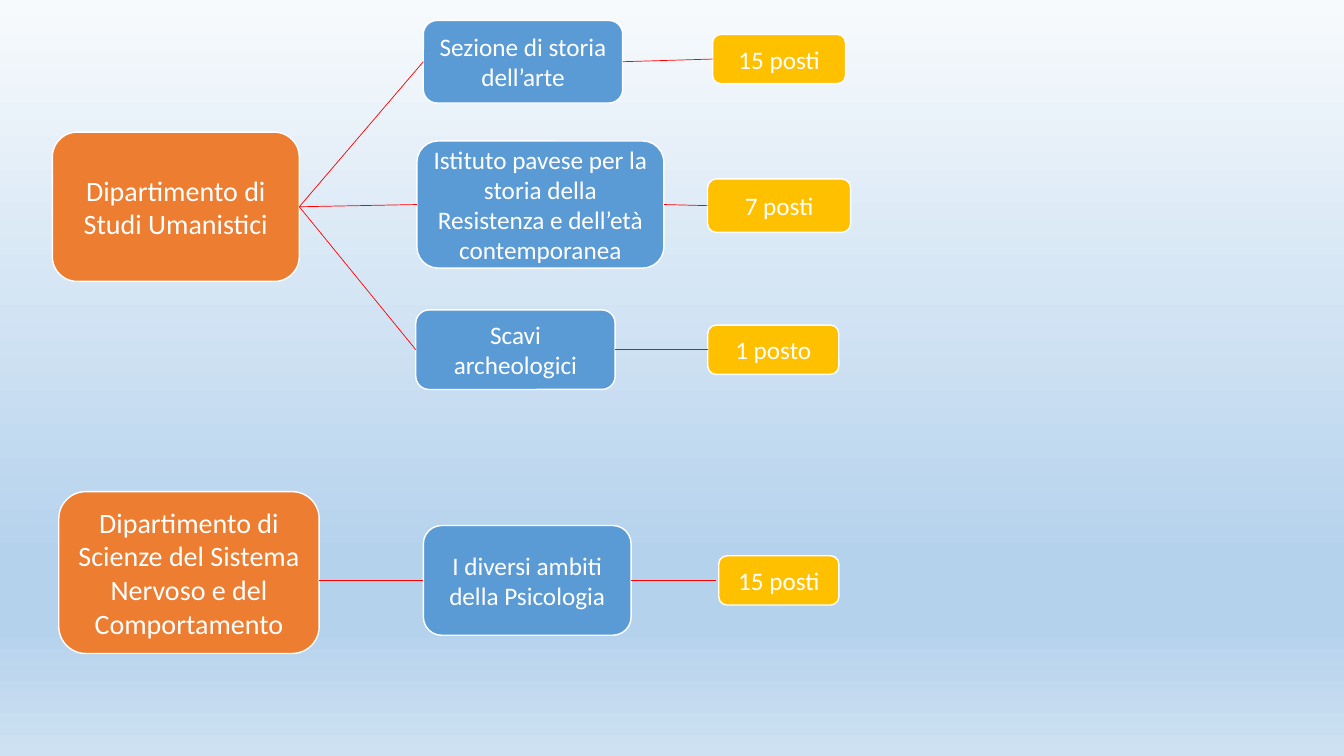
from dataclasses import dataclass

from lxml.etree import SubElement
from pptx import Presentation
from pptx.dml.color import RGBColor
from pptx.enum.shapes import MSO_CONNECTOR, MSO_SHAPE
from pptx.enum.text import MSO_ANCHOR, PP_ALIGN
from pptx.oxml.ns import qn
from pptx.util import Pt


@dataclass(frozen=True)
class Theme:
    """Colours, font and type sizes of the slide."""
    dept: str = "ED7D31"
    unit: str = "5B9BD5"
    seats: str = "FFC000"
    white: str = "FFFFFF"
    link: str = "FF0000"
    font: str = "Calibri"
    large: int = 20
    small: int = 18
    sky: tuple = ((0, "F7FAFD"), (74, "B5D2EC"), (83, "B5D2EC"), (100, "CEE1F2"))


def write(shape, text, *, size, color, font):
    """Put centred text into a shape."""
    frame = shape.text_frame
    frame.word_wrap = True
    frame.vertical_anchor = MSO_ANCHOR.MIDDLE
    par = frame.paragraphs[0]
    par.alignment = PP_ALIGN.CENTER
    run = par.add_run()
    run.text = text
    run.font.size = Pt(size)
    run.font.name = font
    run.font.color.rgb = RGBColor.from_string(color)


class Chart:
    """Draws boxes and links on one slide in one theme."""

    def __init__(self, slide, theme):
        """Keep the slide and its theme."""
        self.slide = slide
        self.theme = theme

    def sky(self):
        """Fill the background with the vertical gradient."""
        fill = self.slide.background.fill
        fill.gradient()
        fill.gradient_angle = 270
        stops = next(self.slide.element.iter(qn("a:gsLst")))
        for stop in list(stops):
            stops.remove(stop)
        for place, color in self.theme.sky:
            stop = SubElement(stops, qn("a:gs"), pos=str(place * 1000))
            SubElement(stop, qn("a:srgbClr"), val=color)

    def box(self, text, area, fill, size):
        """Add a rounded box with text."""
        shape = self.slide.shapes.add_shape(
            MSO_SHAPE.ROUNDED_RECTANGLE, *(Pt(side) for side in area))
        shape.shadow.inherit = False
        shape.fill.solid()
        shape.fill.fore_color.rgb = RGBColor.from_string(fill)
        shape.line.color.rgb = RGBColor.from_string(self.theme.white)
        shape.line.width = Pt(1)
        write(shape, text, size=size, color=self.theme.white, font=self.theme.font)
        return shape

    def dept(self, text, area):
        """Add a department box."""
        return self.box(text, area, self.theme.dept, self.theme.large)

    def unit(self, text, area):
        """Add a unit box."""
        return self.box(text, area, self.theme.unit, self.theme.small)

    def seats(self, text, area):
        """Add a box with the number of places."""
        return self.box(text, area, self.theme.seats, self.theme.small)

    def link(self, start, end):
        """Join two ends, each a box or a point."""
        line = self.slide.shapes.add_connector(MSO_CONNECTOR.STRAIGHT, 0, 0, 0, 0)
        if isinstance(start, tuple):
            line.begin_x, line.begin_y = (Pt(side) for side in start)
        else:
            line.begin_connect(start, 3)
        if isinstance(end, tuple):
            line.end_x, line.end_y = (Pt(side) for side in end)
        else:
            line.end_connect(end, 1)
        line.line.color.rgb = RGBColor.from_string(self.theme.link)
        line.line.width = Pt(0.5)
        SubElement(line.element.spPr, qn("a:effectLst"))


def main():
    """Build and save the slide."""
    deck = Presentation()
    deck.slide_width, deck.slide_height = Pt(960), Pt(540)
    chart = Chart(deck.slides.add_slide(deck.slide_layouts[6]), Theme())
    chart.sky()

    arts = chart.dept("Dipartimento di Studi Umanistici", (37.4, 94.4, 176.4, 106.6))
    rows = (
        ("Sezione di storia dell’arte", (302.4, 14.6, 142.4, 59),
         "15 posti", (509, 24.6, 95, 35.2)),
        ("Istituto pavese per la storia della Resistenza e dell’età contemporanea",
         (297.8, 100.7, 176.4, 90.8), "7 posti", (505.4, 127.8, 102.2, 38.2)),
        ("Scavi archeologici", (297, 221.4, 142.4, 56.8),
         "1 posto", (505.6, 232.2, 93.6, 35.2)),
    )
    for name, place, count, spot in rows:
        unit = chart.unit(name, place)
        seats = chart.seats(count, spot)
        chart.link(arts, unit)
        chart.link(unit, seats)

    chart.dept("Dipartimento di Scienze del Sistema Nervoso e del Comportamento",
               (42, 351.2, 186, 115.6))
    mind = chart.unit("I diversi ambiti della Psicologia", (302.4, 375.4, 148.4, 78.4))
    chart.seats("15 posti", (513.4, 397, 85.8, 35.2))
    chart.link((228, 414.6), mind)
    chart.link(mind, (511.2, 414.6))

    deck.save("out.pptx")


if __name__ == "__main__":
    main()
